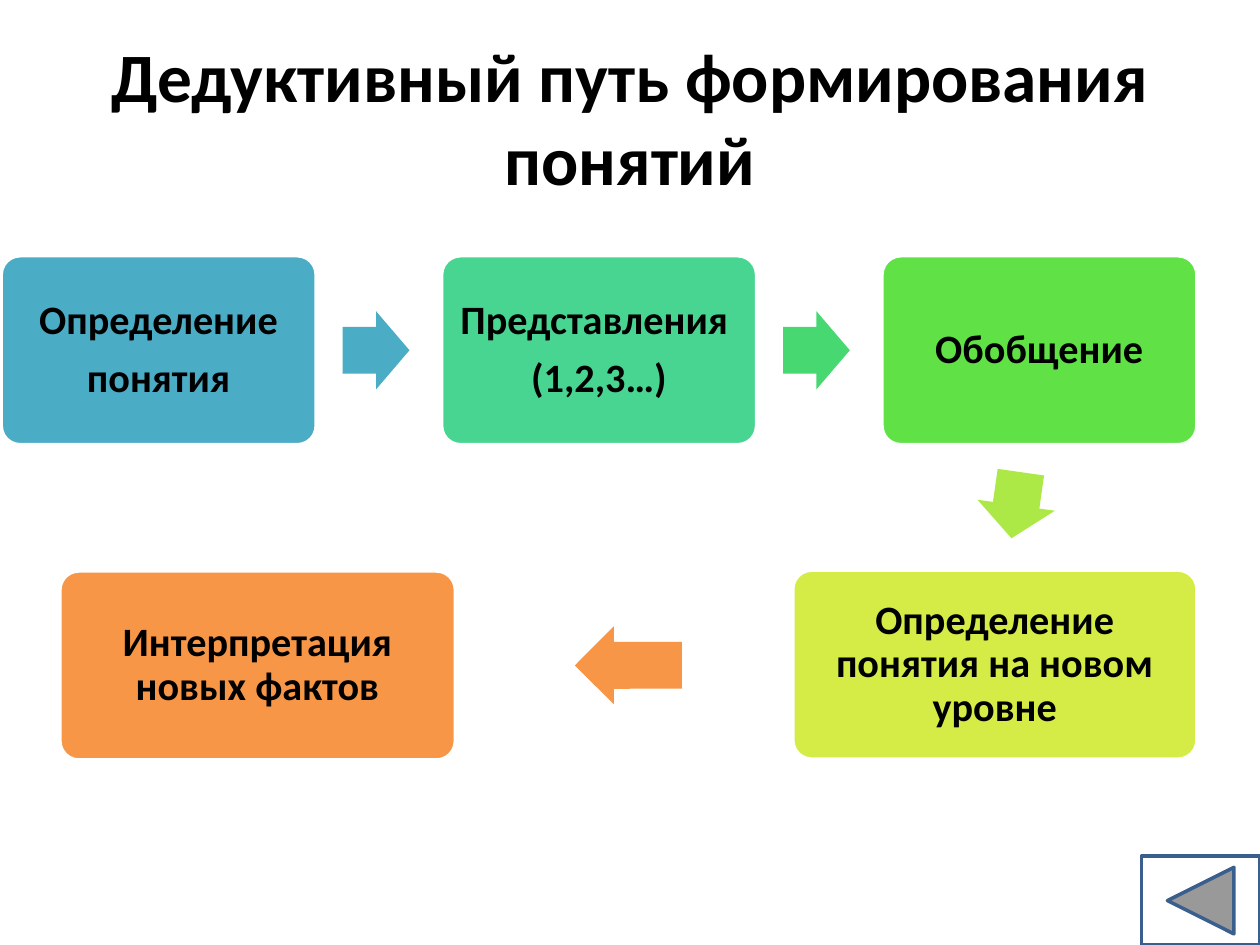
from dataclasses import dataclass

from pptx import Presentation
from pptx.dml.color import RGBColor
from pptx.enum.shapes import MSO_SHAPE
from pptx.enum.text import MSO_ANCHOR, PP_ALIGN
from pptx.util import Pt

ROUNDED = MSO_SHAPE.ROUNDED_RECTANGLE
RIGHT_ARROW = MSO_SHAPE.RIGHT_ARROW
BACK_BUTTON = MSO_SHAPE.ACTION_BUTTON_BACK_OR_PREVIOUS
CENTER = PP_ALIGN.CENTER
MIDDLE = MSO_ANCHOR.MIDDLE

COLORS = {
    "blue": "4BACC6",
    "mint": "48D491",
    "green": "47D872",
    "bright": "60E146",
    "lime": "ACE946",
    "yellow": "D5EC46",
    "orange": "F79646",
    "white": "FFFFFF",
    "black": "000000",
    "navy": "3A5F8C",
}
FONT = "Calibri"
STEP_HEIGHT = 108
STEP_WIDTH = 180
ARROW_HEIGHT = 44.64
ARROW_WIDTH = 38.16
TOP_ROW = 146.16
TOP_LEFT = 0.72
TOP_PITCH = 251.64
ARROW_OFFSET = 195.12
ARROW_TOP = TOP_ROW + (STEP_HEIGHT - ARROW_HEIGHT) / 2


@dataclass
class Step:
    lines: list[str]
    color: str
    left: float
    top: float = TOP_ROW
    width: float = STEP_WIDTH


@dataclass
class Arrow:
    color: str
    left: float
    top: float = ARROW_TOP
    width: float = ARROW_WIDTH
    rotation: float = 0


def rgb(color: str) -> RGBColor:
    return RGBColor.from_string(COLORS[color])


def write_lines(frame, lines: list[str], size: float, spacing: float = 1, after: float = 0):
    """Fill a text frame with centred bold paragraphs."""
    frame.word_wrap = True
    frame.vertical_anchor = MIDDLE
    for index, line in enumerate(lines):
        paragraph = frame.paragraphs[0] if index == 0 else frame.add_paragraph()
        paragraph.text = line
        paragraph.alignment = CENTER
        paragraph.line_spacing = spacing
        paragraph.space_after = Pt(after)
        paragraph.font.name = FONT
        paragraph.font.size = Pt(size)
        paragraph.font.bold = True
        paragraph.font.color.rgb = rgb("black")


def add_filled(slide, kind, left: float, top: float, width: float, height: float,
               fill: str, line: str | None = None):
    shape = slide.shapes.add_shape(kind, Pt(left), Pt(top), Pt(width), Pt(height))
    shape.shadow.inherit = False
    shape.fill.solid()
    shape.fill.fore_color.rgb = rgb(fill)
    if line:
        shape.line.color.rgb = rgb(line)
        shape.line.width = Pt(2)
    else:
        shape.line.fill.background()
    return shape


def add_step(slide, step: Step):
    box = add_filled(slide, ROUNDED, step.left, step.top, step.width, STEP_HEIGHT,
                     step.color, "white")
    box.adjustments[0] = 0.1
    frame = box.text_frame
    frame.margin_left = frame.margin_right = Pt(7.2)
    frame.margin_top = frame.margin_bottom = Pt(7.2)
    write_lines(frame, step.lines, 23, spacing=0.9, after=8.05)


def add_arrow(slide, arrow: Arrow):
    shape = add_filled(slide, RIGHT_ARROW, arrow.left, arrow.top, arrow.width,
                       ARROW_HEIGHT, arrow.color)
    shape.adjustments[0] = 0.6
    shape.adjustments[1] = 0.5
    shape.rotation = arrow.rotation


def main():
    presentation = Presentation()
    presentation.slide_width = Pt(720)
    presentation.slide_height = Pt(540)
    slide = presentation.slides.add_slide(presentation.slide_layouts[6])

    title = slide.shapes.add_textbox(Pt(36), Pt(21.6), Pt(648), Pt(90))
    write_lines(title.text_frame, ["Дедуктивный путь формирования понятий"], 39.6)

    top_steps = [
        (["Определение", "понятия"], "blue"),
        (["Представления ", "(1,2,3…)"], "mint"),
        (["Обобщение"], "bright"),
    ]
    steps = [Step(lines, color, TOP_LEFT + column * TOP_PITCH)
             for column, (lines, color) in enumerate(top_steps)]
    steps += [
        Step(["Определение понятия на новом уровне"], "yellow", 453, 325.8, 231),
        Step(["Интерпретация новых фактов"], "orange", 34.2, 326.3, 226),
    ]
    arrows = [Arrow(color, TOP_LEFT + column * TOP_PITCH + ARROW_OFFSET)
              for column, color in enumerate(["blue", "green"])]
    arrows += [
        Arrow("lime", 561.6, 266.4, rotation=98.1),
        Arrow("orange", 328.5, 357.84, 61.2, rotation=179.9),
    ]
    for step in steps:
        add_step(slide, step)
    for arrow in arrows:
        add_arrow(slide, arrow)

    add_filled(slide, BACK_BUTTON, 652.3, 489.3, 67.7, 50.7, "white", "navy")
    presentation.save("out.pptx")


if __name__ == "__main__":
    main()
